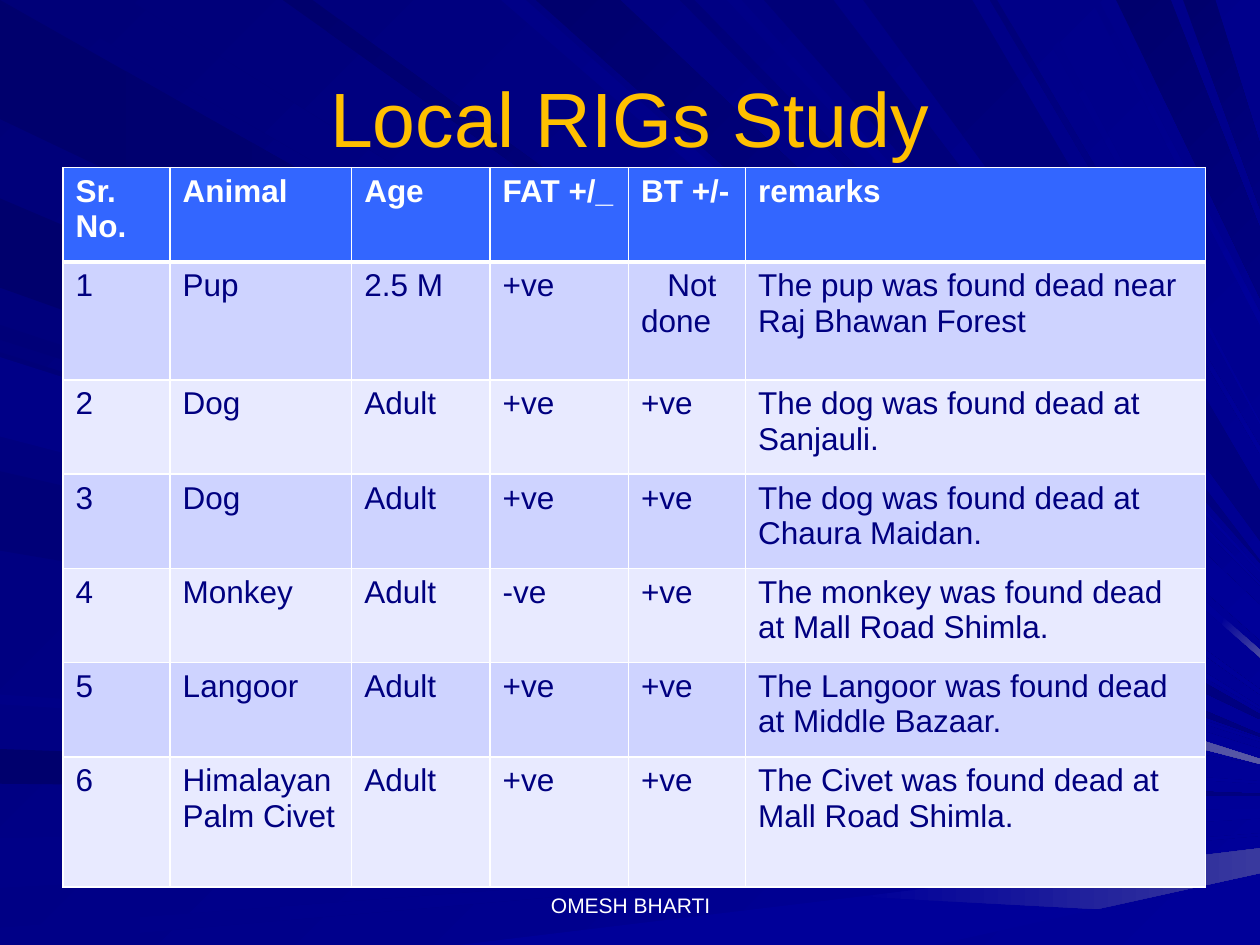
"""Build the slide on the local RIGs study with its table of tested animals."""
from dataclasses import dataclass
from typing import Optional

from lxml.etree import SubElement
from pptx import Presentation
from pptx.dml.color import RGBColor
from pptx.dml.fill import FillFormat
from pptx.enum.text import MSO_ANCHOR, PP_ALIGN
from pptx.oxml.ns import qn
from pptx.slide import Slide
from pptx.table import _Cell as Cell
from pptx.text.text import TextFrame
from pptx.util import Cm, Pt

DEEP = RGBColor.from_string("00006D")
DARK = RGBColor.from_string("000078")
MID = RGBColor.from_string("000087")
NAVY = RGBColor.from_string("000080")
BLUE = RGBColor.from_string("000099")
DUSK = RGBColor.from_string("39399E")
HAZE = RGBColor.from_string("4A4AA1")
MIST = RGBColor.from_string("5A5AA6")
GOLD = RGBColor.from_string("FFC000")
WHITE = RGBColor.from_string("FFFFFF")
HEAD = RGBColor.from_string("3366FF")
BANDS = (RGBColor.from_string("CED3FF"), RGBColor.from_string("E8EAFF"))
FONT = "Arial"
WIDE, HIGH = 25.4, 19.05
ANGLES = {"left": 0, "top": 45, "base": 0}
Point = tuple[float, float]


@dataclass(frozen=True)
class Ray:
    """A beam from a stretch of one slide edge to a stretch of the right edge."""
    side: str
    near: Point
    far: Point
    start: RGBColor
    end: RGBColor = BLUE
    tip: Optional[RGBColor] = None
    cut: float = 1

    def point(self, index: int, part: float) -> Point:
        """Return the point at a part of the way along one border."""
        near = self.near[index]
        x, y = {"left": (0, near), "top": (near, 0), "base": (near, HIGH)}[self.side]
        return x + (WIDE - x) * part, y + (self.far[index] - y) * part


RAYS = (
    Ray("left", (0, 2.4), (14.4, 14.5), DEEP, NAVY),
    Ray("top", (0.7, 2.6), (14.3, 14.25), DARK),
    Ray("left", (15.1, 15.8), (16, 16.05), DEEP, NAVY),
    Ray("left", (16.9, 17.9), (16.3, 16.5), MID),
    Ray("left", (18.7, HIGH), (16.8, 16.85), MID),
    Ray("base", (9.25, 18.85), (17.1, 17.6), BLUE, BLUE, DUSK, 0.5),
    Ray("left", (6.55, 6.85), (14.9, 14.95), DARK),
    Ray("left", (4, 5.8), (14.8, 14.85), DEEP, NAVY),
    Ray("top", (10.1, 10.6), (13.25, 13.1), MID, BLUE, HAZE, 0.95),
    Ray("top", (10.8, 12.5), (12.9, 12.2), DEEP),
    Ray("top", (13.7, 14), (11.8, 11.75), DARK),
    Ray("top", (15.4, 16.8), (11.35, 11.3), DARK, NAVY),
    Ray("top", (22.5, 23.6), (6, 4.6), DEEP, NAVY),
    Ray("top", (23.85, 24.5), (4.2, 2.9), DEEP, NAVY),
    Ray("left", (7.1, 8.7), (15.1, 15.3), DARK),
    Ray("left", (9.5, 11.1), (15.35, 15.4), DARK),
    Ray("left", (14, 14.2), (15.75, 15.8), MID),
    Ray("top", (5.7, 6.3), (14, 13.9), DEEP),
    Ray("top", (14.65, 14.95), (11.55, 11.5), MID),
    Ray("top", (17.4, 19.6), (10.9, 9.9), DARK, NAVY),
    Ray("top", (19.95, 20.1), (9.15, 9), DARK),
    Ray("top", (20.7, 20.9), (8.55, 8.5), MID),
    Ray("top", (22, 22.15), (6.55, 6.3), MID),
    Ray("left", (7.2, 8.8), (15.3, 15.4), MID, BLUE, MIST, 0.64),
)

COLS = (2.16, 3.66, 2.79, 2.79, 2.36, 9.27)
ROW = 1.9
TALL = {1: 2.38, 6: 2.62}
ROWS = (
    ("Sr. No.", "Animal", "Age", "FAT +/_", "BT +/-", "remarks"),
    ("1", "Pup", "2.5 M", "+ve", "Not done", "The pup was found dead near Raj Bhawan Forest"),
    ("2", "Dog", "Adult", "+ve", "+ve", "The dog was found dead at Sanjauli."),
    ("3", "Dog", "Adult", "+ve", "+ve", "The dog was found dead at Chaura Maidan."),
    ("4", "Monkey", "Adult", "-ve", "+ve", "The monkey was found dead at Mall Road Shimla."),
    ("5", "Langoor", "Adult", "+ve", "+ve", "The Langoor was found dead at Middle Bazaar."),
    ("6", "Himalayan Palm Civet", "Adult", "+ve", "+ve", "The Civet was found dead at Mall Road Shimla."),
)


def shade(fill: FillFormat, start: RGBColor, end: RGBColor, angle: int) -> None:
    """Fill with one colour, or with a blend at a clockwise angle."""
    if start == end:
        fill.solid()
        fill.fore_color.rgb = start
        return
    fill.gradient()
    fill.gradient_angle = -angle % 360
    for stop, color in zip(fill.gradient_stops, (start, end)):
        stop.color.rgb = color


def draw_part(slide: Slide, ray: Ray, low: float, high: float,
              start: RGBColor, end: RGBColor) -> None:
    """Draw the part of a beam that lies between two cuts."""
    ends = ((0, low), (0, high), (1, high), (1, low))
    first, *rest = [tuple(Cm(v) for v in ray.point(*spot)) for spot in ends]
    pen = slide.shapes.build_freeform(*first)
    pen.add_line_segments(rest, close=True)
    shape = pen.convert_to_shape()
    shape.shadow.inherit = False
    shape.line.fill.background()
    shade(shape.fill, start, end, ANGLES[ray.side])


def draw_ray(slide: Slide, ray: Ray) -> None:
    """Draw one beam of the backdrop with its tip."""
    draw_part(slide, ray, 0, ray.cut, ray.start, ray.end)
    if ray.tip:
        draw_part(slide, ray, ray.cut, 1, ray.end, ray.tip)


def write(frame: TextFrame, text: str, size: int, color: RGBColor,
          align: PP_ALIGN = PP_ALIGN.LEFT, bold: bool = False) -> None:
    """Set the text of a frame and format its run."""
    frame.text = text
    frame.word_wrap = True
    para = frame.paragraphs[0]
    para.alignment = align
    font = para.runs[0].font
    font.name, font.size, font.bold = FONT, Pt(size), bold
    font.color.rgb = color


def edge(cell: Cell, side: str, width: int) -> None:
    """Give a cell a white border on one side."""
    line = SubElement(cell._tc.get_or_add_tcPr(), qn(f"a:{side}"), w=str(Pt(width)))
    SubElement(SubElement(line, qn("a:solidFill")), qn("a:srgbClr"), val=str(WHITE))


def draw_cell(cell: Cell, row: int, text: str) -> None:
    """Fill, frame and write one cell of the table."""
    top = row == 0
    sides = {"lnL": 1, "lnR": 1, "lnT": 3 if row == 1 else 1, "lnB": 3 if top else 1}
    for side, width in sides.items():
        edge(cell, side, width)
    cell.fill.solid()
    cell.fill.fore_color.rgb = HEAD if top else BANDS[(row - 1) % 2]
    write(cell.text_frame, text, 18, WHITE if top else NAVY, bold=top)
    if text == "Not done":
        cell.text_frame.paragraphs[0]._p.get_or_add_pPr().set("indent", str(Cm(0.53)))


def draw_table(slide: Slide) -> None:
    """Draw the table of animals."""
    highs = [TALL.get(i, ROW) for i in range(len(ROWS))]
    frame = slide.shapes.add_table(len(ROWS), len(COLS), Cm(1.27), Cm(3.38),
                                   Cm(sum(COLS)), Cm(sum(highs)))
    table = frame.table
    for col, width in zip(table.columns, COLS):
        col.width = Cm(width)
    for i, texts in enumerate(ROWS):
        table.rows[i].height = Cm(highs[i])
        for j, text in enumerate(texts):
            draw_cell(table.cell(i, j), i, text)


def main() -> None:
    """Build and save the slide."""
    deck = Presentation()
    deck.slide_width, deck.slide_height = Cm(WIDE), Cm(HIGH)
    slide = deck.slides.add_slide(deck.slide_layouts[5])
    shade(slide.background.fill, DARK, BLUE, 45)
    for ray in RAYS:
        draw_ray(slide, ray)

    title = slide.shapes.title
    slide.shapes.element.append(title.element)
    title.left, title.top, title.width, title.height = Cm(1.27), Cm(0.76), Cm(22.86), Cm(3.18)
    write(title.text_frame, "Local RIGs Study", 44, GOLD, PP_ALIGN.CENTER)
    title.text_frame.vertical_anchor = MSO_ANCHOR.MIDDLE

    draw_table(slide)
    foot = slide.shapes.add_textbox(Cm(8.69), Cm(17.35), Cm(8.05), Cm(1.27))
    write(foot.text_frame, "OMESH BHARTI", 12, WHITE, PP_ALIGN.CENTER)
    foot.text_frame.vertical_anchor = MSO_ANCHOR.BOTTOM
    deck.save("out.pptx")


if __name__ == "__main__":
    main()
